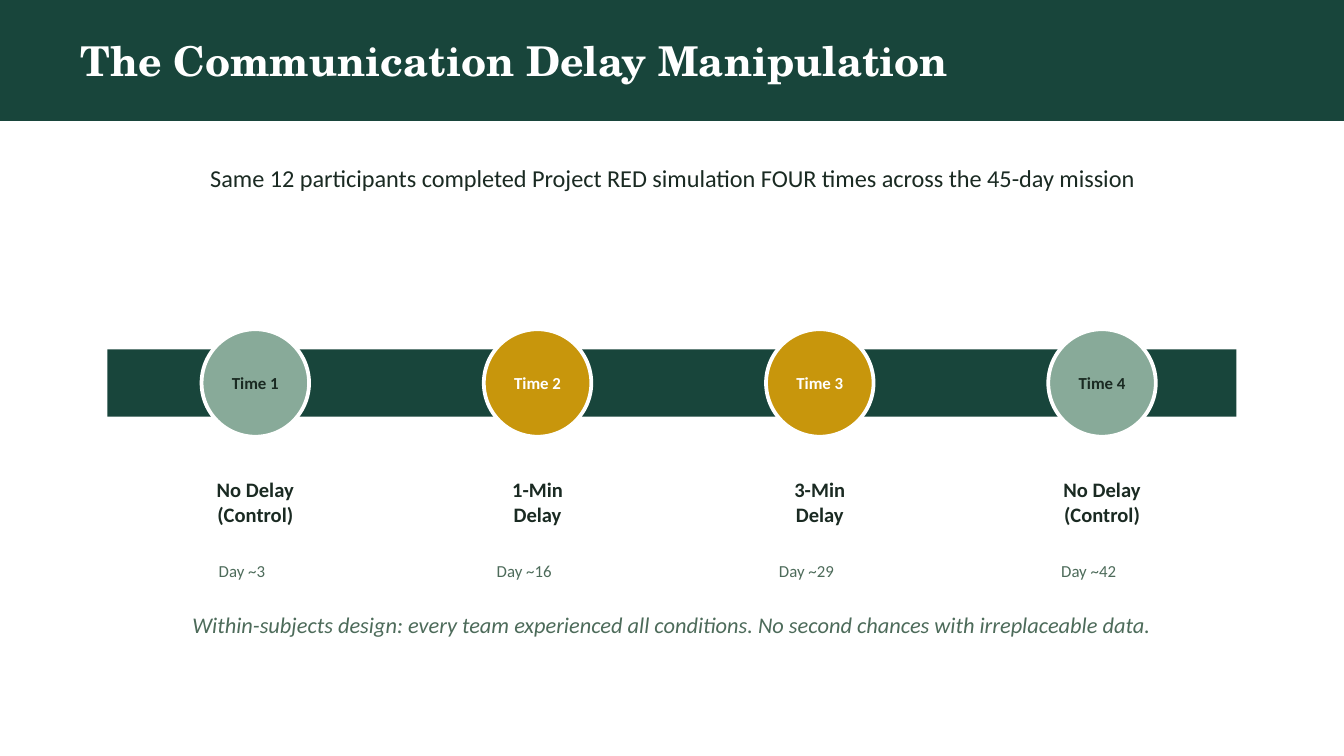
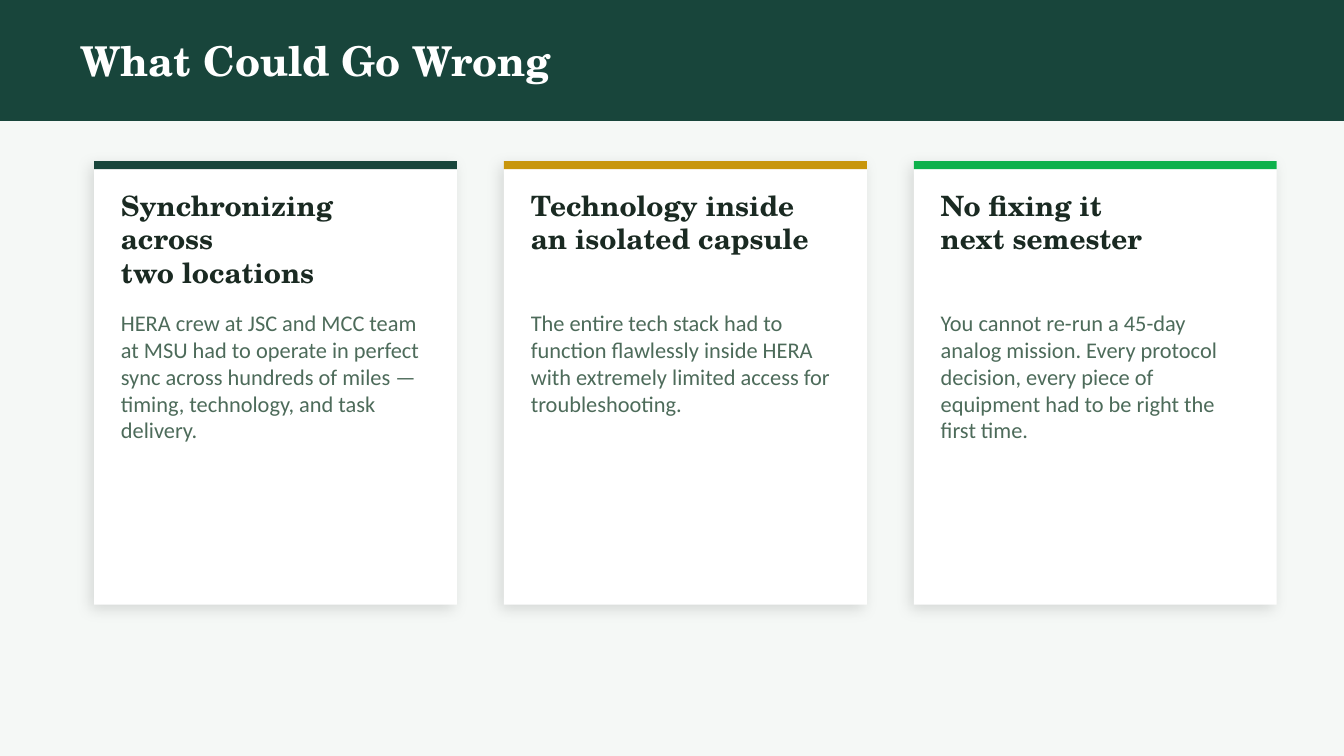
from dataclasses import dataclass

from lxml.etree import SubElement
from pptx import Presentation
from pptx.dml.color import RGBColor as Rgb
from pptx.enum.shapes import MSO_SHAPE as Shape
from pptx.enum.text import MSO_ANCHOR as Anchor, MSO_AUTO_SIZE as AutoSize, PP_ALIGN as Align
from pptx.oxml.ns import qn
from pptx.util import Inches, Pt


@dataclass(frozen=True)
class Theme:
    serif: str = "TeX Gyre Schola"
    sans: str = "Calibri"
    white: str = "FFFFFF"
    mist: str = "F5F8F6"
    forest: str = "18453B"
    sage: str = "88AA99"
    gold: str = "C8960C"
    green: str = "0DB14B"
    ink: str = "1A2A22"
    muted: str = "4D6B5A"
    title_size: int = 22
    heading_size: int = 15
    intro_size: int = 13
    body_size: int = 12
    label_size: int = 11
    small_size: int = 9


THEME = Theme()
TITLE_ONLY = 5
NO_INSET = 0, 0
BOX_INSET = 0.1, 0.05

MILESTONES = [
    ("Time 1", "No Delay\n(Control)", "Day ~3", THEME.sage, THEME.ink),
    ("Time 2", "1-Min\nDelay", "Day ~16", THEME.gold, THEME.white),
    ("Time 3", "3-Min\nDelay", "Day ~29", THEME.gold, THEME.white),
    ("Time 4", "No Delay\n(Control)", "Day ~42", THEME.sage, THEME.ink),
]

RISKS = [
    (THEME.forest, "Synchronizing across\ntwo locations",
     "HERA crew at JSC and MCC team at MSU had to operate in perfect sync across "
     "hundreds of miles — timing, technology, and task delivery."),
    (THEME.gold, "Technology inside\nan isolated capsule",
     "The entire tech stack had to function flawlessly inside HERA with extremely "
     "limited access for troubleshooting."),
    (THEME.green, "No fixing it\nnext semester",
     "You cannot re-run a 45-day analog mission. Every protocol decision, every piece "
     "of equipment had to be right the first time."),
]


def write(frame, text, size, color, font=THEME.sans, bold=False, italic=False,
          align=Align.LEFT, anchor=Anchor.TOP, inset=NO_INSET):
    frame.word_wrap = True
    frame.auto_size = AutoSize.NONE
    frame.vertical_anchor = anchor
    frame.margin_left = frame.margin_right = Inches(inset[0])
    frame.margin_top = frame.margin_bottom = Inches(inset[1])
    frame.text = text
    for paragraph in frame.paragraphs:
        paragraph.alignment = align
        paragraph.font.name = font
        paragraph.font.size = Pt(size)
        paragraph.font.bold = bold
        paragraph.font.italic = italic
        paragraph.font.color.rgb = Rgb.from_string(color)


def add_text(slide, area, text, size, color, **style):
    box = slide.shapes.add_textbox(*map(Inches, area))
    write(box.text_frame, text, size, color, **style)


def add_centered(slide, area, text, size, color, anchor=Anchor.MIDDLE, **style):
    add_text(slide, area, text, size, color, align=Align.CENTER, anchor=anchor,
             inset=BOX_INSET, **style)


def add_block(slide, area, color, kind=Shape.RECTANGLE):
    block = slide.shapes.add_shape(kind, *map(Inches, area))
    block.shadow.inherit = False
    block.fill.solid()
    block.fill.fore_color.rgb = Rgb.from_string(color)
    block.line.fill.background()
    return block


def add_soft_shadow(block):
    effects = block.element.spPr.find(qn("a:effectLst"))
    shadow = SubElement(effects, qn("a:outerShdw"), blurRad=str(Pt(8)), dist=str(Pt(3)),
                        dir=str(135 * 60000), algn="bl", rotWithShape="0")
    black = SubElement(shadow, qn("a:srgbClr"), val="000000")
    SubElement(black, qn("a:alpha"), val="12000")


def add_titled_slide(deck, title, background):
    slide = deck.slides.add_slide(deck.slide_layouts[TITLE_ONLY])
    slide.background.fill.solid()
    slide.background.fill.fore_color.rgb = Rgb.from_string(background)
    heading = slide.shapes.title
    heading.left, heading.top, heading.width, heading.height = map(Inches, (0.6, 0.1, 8.8, 0.7))
    write(heading.text_frame, title, THEME.title_size, THEME.white, THEME.serif,
          bold=True, anchor=Anchor.MIDDLE)
    band = add_block(slide, (0, 0, 10, 0.9), THEME.forest)
    heading.element.addprevious(band.element)
    return slide


def add_milestone(slide, left, time, condition, day, fill, color):
    marker = add_block(slide, (left, 2.45, 0.8, 0.8), fill, Shape.OVAL)
    marker.line.color.rgb = Rgb.from_string(THEME.white)
    marker.line.width = Pt(2)
    write(marker.text_frame, time, THEME.small_size, color, bold=True,
          align=Align.CENTER, anchor=Anchor.MIDDLE)
    add_centered(slide, (left - 0.4, 3.5, 1.6, 0.6), condition, THEME.label_size, THEME.ink,
                 anchor=Anchor.TOP, bold=True)
    add_centered(slide, (left - 0.2, 4.1, 1, 0.3), day, THEME.small_size, THEME.muted)


def add_risk_card(slide, left, accent, heading, detail):
    card = add_block(slide, (left, 1.2, 2.7, 3.3), THEME.white)
    add_soft_shadow(card)
    add_block(slide, (left, 1.2, 2.7, 0.06), accent)
    add_text(slide, (left + 0.2, 1.4, 2.3, 0.8), heading, THEME.heading_size, THEME.ink,
             font=THEME.serif, bold=True)
    add_text(slide, (left + 0.2, 2.3, 2.3, 2), detail, THEME.body_size, THEME.muted)


def build_delay_slide(deck):
    slide = add_titled_slide(deck, "The Communication Delay Manipulation", THEME.white)
    add_centered(slide, (0.8, 1.1, 8.4, 0.45),
                 "Same 12 participants completed Project RED simulation FOUR times "
                 "across the 45-day mission", THEME.intro_size, THEME.ink)
    add_block(slide, (0.8, 2.6, 8.4, 0.5), THEME.forest)
    for index, milestone in enumerate(MILESTONES):
        add_milestone(slide, 1.5 + 2.1 * index, *milestone)
    add_centered(slide, (0.8, 4.4, 8.4, 0.5),
                 "Within-subjects design: every team experienced all conditions. "
                 "No second chances with irreplaceable data.",
                 THEME.body_size, THEME.muted, italic=True)


def build_risk_slide(deck):
    slide = add_titled_slide(deck, "What Could Go Wrong", THEME.mist)
    for index, risk in enumerate(RISKS):
        add_risk_card(slide, 0.7 + 3.05 * index, *risk)


def main():
    deck = Presentation()
    deck.slide_width = Inches(10)
    deck.slide_height = Inches(10 * 9 / 16)
    build_delay_slide(deck)
    build_risk_slide(deck)
    deck.save("out.pptx")


if __name__ == "__main__":
    main()
